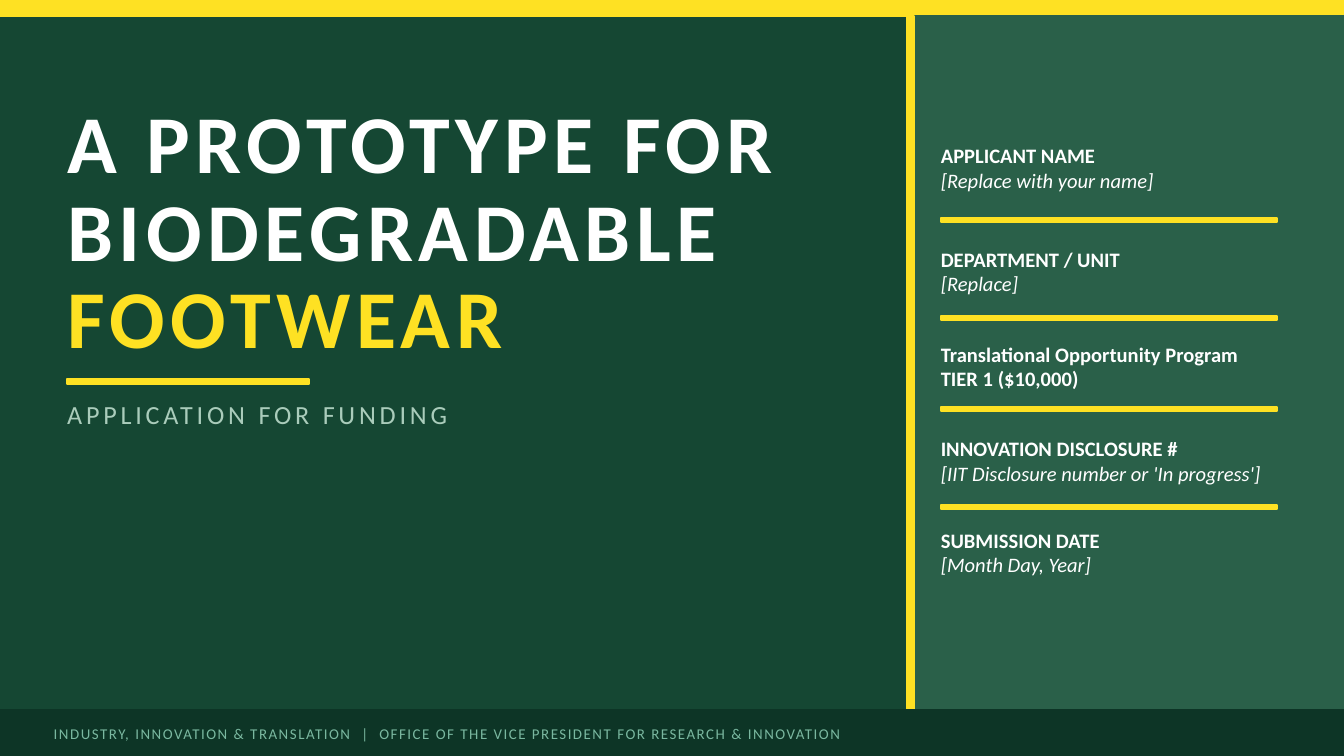
from pptx import Presentation
from pptx.dml.color import RGBColor
from pptx.enum.shapes import MSO_SHAPE
from pptx.enum.text import MSO_ANCHOR, MSO_AUTO_SIZE, PP_ALIGN
from pptx.util import Inches, Pt

FOREST = RGBColor(0x15, 0x47, 0x33)
PANEL_GREEN = RGBColor(0x2A, 0x60, 0x49)
FOOTER_GREEN = RGBColor(0x0D, 0x35, 0x26)
YELLOW = RGBColor(0xFE, 0xE1, 0x23)
WHITE = RGBColor(0xFF, 0xFF, 0xFF)
PALE_GREEN = RGBColor(0xAA, 0xCC, 0xBB)
MINT = RGBColor(0x7A, 0xB8, 0xA0)

SLIDE_WIDTH = 10
BAND_HEIGHT = 0.12
PANEL_HEIGHT = 5.28
FOOTER_TOP = 5.28
PANEL_LEFT = 6.8
DETAIL_LEFT = 7

HEADLINE = {"size": Pt(44), "bold": True}
LABEL = {"size": Pt(11), "bold": True, "italic": False}
VALUE = {"size": Pt(11), "bold": False, "italic": True}

# Top and height of each entry, the rule below it, and its two lines.
DETAILS = [
    (0.9, 0.7, 1.62, ("APPLICANT NAME", LABEL), ("[Replace with your name]", VALUE)),
    (1.72, 0.6, 2.35, ("DEPARTMENT / UNIT", LABEL), ("[Replace]", VALUE)),
    (2.45, 0.55, 3.03, ("Translational Opportunity Program", LABEL),
     ("TIER 1 ($10,000)", LABEL)),
    (3.13, 0.6, 3.76, ("INNOVATION DISCLOSURE #", LABEL),
     ("[IIT Disclosure number or 'In progress']", VALUE)),
    (3.86, 0.5, None, ("SUBMISSION DATE", LABEL), ("[Month Day, Year]", VALUE)),
]


class SlideBuilder:
    def __init__(self, page, font_name="Calibri"):
        self.page = page
        self.font_name = font_name

    def background(self, color):
        fill = self.page.background.fill
        fill.solid()
        fill.fore_color.rgb = color

    def bar(self, left, top, width, height, color):
        shape = self.page.shapes.add_shape(
            MSO_SHAPE.RECTANGLE, *map(Inches, (left, top, width, height)))
        shape.shadow.inherit = False
        shape.fill.solid()
        shape.fill.fore_color.rgb = color
        shape.line.color.rgb = color
        shape.line.width = Pt(1)

    def title(self, area, line, color, spacing):
        box = self.page.shapes.title
        box.left, box.top, box.width, box.height = map(Inches, area)
        self.set_lines(box, [line], color, spacing)

    def text(self, area, lines, color, spacing=0):
        box = self.page.shapes.add_textbox(*map(Inches, area))
        self.set_lines(box, lines, color, spacing)

    def set_lines(self, box, lines, color, spacing):
        """Fill the box with (text, format) lines; spacing is in points."""
        frame = box.text_frame
        frame_format = {
            "word_wrap": True, "auto_size": MSO_AUTO_SIZE.NONE,
            "vertical_anchor": MSO_ANCHOR.MIDDLE,
            "margin_left": 0, "margin_top": 0,
            "margin_right": 0, "margin_bottom": 0,
        }
        for name, value in frame_format.items():
            setattr(frame, name, value)
        for index, (text, text_format) in enumerate(lines):
            para = frame.add_paragraph() if index else frame.paragraphs[0]
            para.alignment = PP_ALIGN.LEFT
            span = para.add_run()
            span.text = text
            for name, value in {"name": self.font_name, **text_format}.items():
                setattr(span.font, name, value)
            span.font.color.rgb = color
            if spacing:
                span._r.get_or_add_rPr().set("spc", str(round(spacing * 100)))


def main():
    deck = Presentation()
    deck.slide_width = Inches(SLIDE_WIDTH)
    deck.slide_height = Inches(SLIDE_WIDTH * 9 / 16)
    builder = SlideBuilder(deck.slides.add_slide(deck.slide_layouts[5]))
    builder.background(FOREST)

    builder.bar(0, 0, SLIDE_WIDTH, BAND_HEIGHT, YELLOW)
    builder.bar(PANEL_LEFT, BAND_HEIGHT, SLIDE_WIDTH - PANEL_LEFT, PANEL_HEIGHT,
                PANEL_GREEN)
    builder.bar(PANEL_LEFT - 0.05, BAND_HEIGHT, 0.05, PANEL_HEIGHT, YELLOW)

    builder.title((0.5, 0.7, 6, 0.7), ("A PROTOTYPE FOR", HEADLINE), WHITE, 3)
    builder.text((0.5, 1.35, 6, 0.7), [("BIODEGRADABLE", HEADLINE)], WHITE, 3)
    builder.text((0.5, 2, 6, 0.7), [("FOOTWEAR", HEADLINE)], YELLOW, 3)
    builder.bar(0.5, 2.82, 1.8, 0.04, YELLOW)
    builder.text((0.5, 2.92, 5.5, 0.32),
                 [("APPLICATION FOR FUNDING", {"size": Pt(14)})], PALE_GREEN, 2)

    for top, height, rule_top, *lines in DETAILS:
        builder.text((DETAIL_LEFT, top, 2.85, height), lines, WHITE)
        if rule_top:
            builder.bar(DETAIL_LEFT, rule_top, 2.5, 0.03, YELLOW)

    builder.bar(0, FOOTER_TOP, SLIDE_WIDTH, 0.35, FOOTER_GREEN)
    builder.text(
        (0.4, FOOTER_TOP, 9.2, 0.35),
        [("INDUSTRY, INNOVATION & TRANSLATION  |  "
          "OFFICE OF THE VICE PRESIDENT FOR RESEARCH & INNOVATION", {"size": Pt(8)})],
        MINT, 0.8)

    deck.save("out.pptx")


if __name__ == "__main__":
    main()
